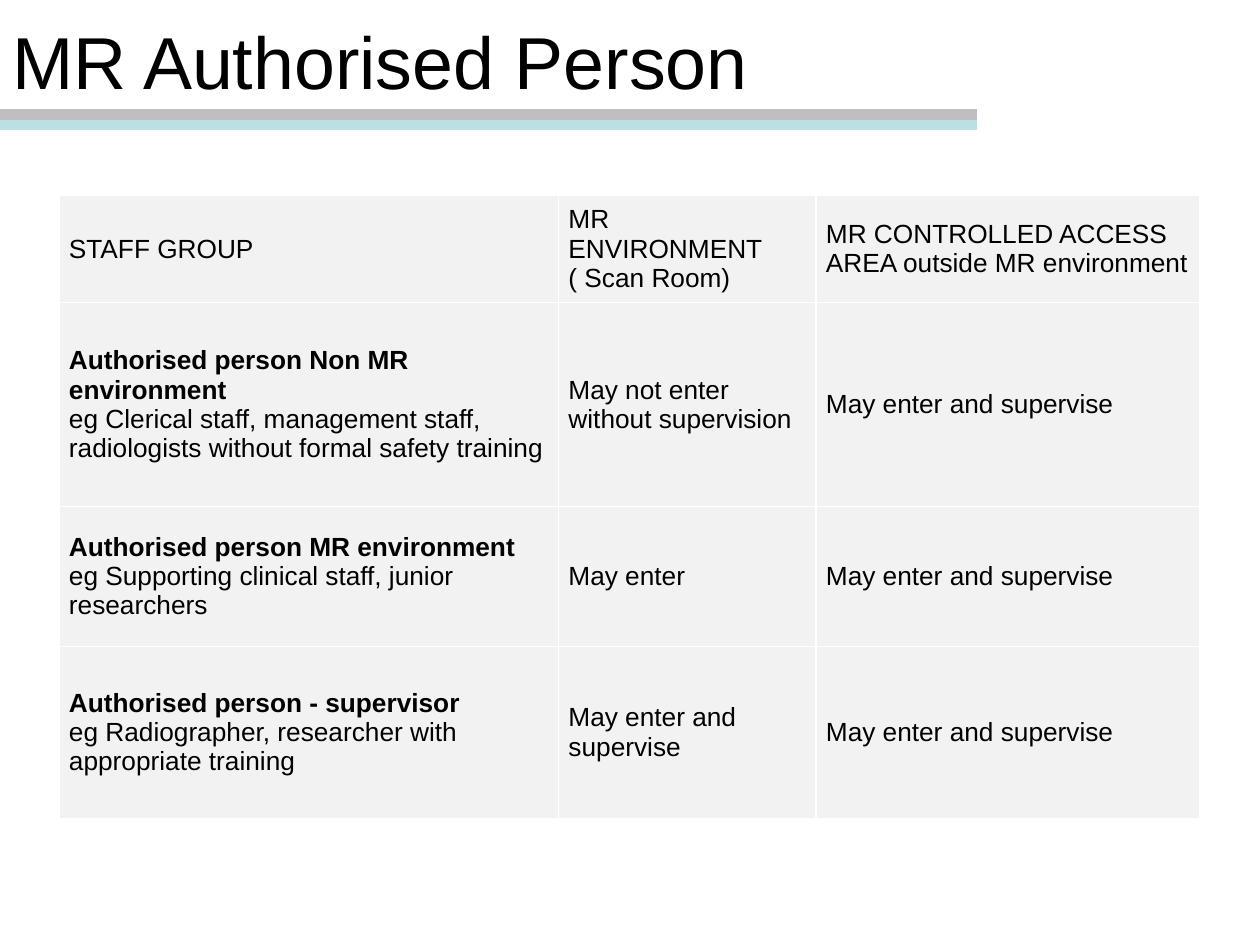
from dataclasses import dataclass

from lxml.etree import SubElement
from pptx import Presentation
from pptx.dml.color import RGBColor
from pptx.enum.shapes import MSO_CONNECTOR as Connector
from pptx.enum.text import MSO_ANCHOR as Anchor
from pptx.oxml.ns import qn
from pptx.util import Cm, Pt

COLOURS = {
    "text": "000000",
    "cell": "F2F2F2",
    "border": "FFFFFF",
    "grey rule": "BFBFBF",
    "blue rule": "BBE0E3",
}
TITLE_FONT = {"name": "Arial", "size": Pt(42), "bold": False}
BODY_FONT = {"name": "Arial", "size": Pt(15), "bold": False}
STAFF_FONT = BODY_FONT | {"bold": True}
CELL_FORMAT = {
    "vertical_anchor": Anchor.MIDDLE,
    "margin_left": Cm(0.2),
    "margin_right": Cm(0.2),
    "margin_top": Cm(0.1),
    "margin_bottom": Cm(0.1),
}
COLUMN_WIDTHS = (10.07, 5.19, 7.74)


@dataclass
class Rule:
    y: float
    colour: str


@dataclass
class AccessRow:
    """One table row; a heading staff group is bold and followed by examples."""
    height: float
    staff: str
    examples: str
    environment: list[str]
    controlled_area: str


RULES = [Rule(2.51, "blue rule"), Rule(2.31, "grey rule")]
SUPERVISE = "May enter and supervise"
ROWS = [
    AccessRow(2.16, "STAFF GROUP", "", ["MR ENVIRONMENT", "( Scan Room)"],
              "MR CONTROLLED ACCESS AREA outside MR environment"),
    AccessRow(4.11, "Authorised person Non MR environment",
              "eg Clerical staff, management staff, radiologists without formal safety training",
              ["May not enter without supervision"], SUPERVISE),
    AccessRow(2.82, "Authorised person MR environment",
              "eg Supporting clinical staff, junior researchers",
              ["May enter"], SUPERVISE),
    AccessRow(3.47, "Authorised person - supervisor",
              "eg Radiographer, researcher with appropriate training",
              [SUPERVISE], SUPERVISE),
]


def colour(name: str) -> RGBColor:
    return RGBColor.from_string(COLOURS[name])


def apply(target, values: dict) -> None:
    """Set each named attribute on the target."""
    for name, value in values.items():
        setattr(target, name, value)


def write(frame, lines: list[tuple[str, dict]]) -> None:
    """Fill a text frame with one paragraph for each (text, font) pair."""
    for index, (text, font) in enumerate(lines):
        paragraph = frame.add_paragraph() if index else frame.paragraphs[0]
        run = paragraph.add_run()
        run.text = text
        apply(run.font, font)
        run.font.color.rgb = colour("text")


def add_rule(slide, rule: Rule) -> None:
    line = slide.shapes.add_connector(
        Connector.STRAIGHT, Cm(0), Cm(rule.y), Cm(19.7), Cm(rule.y))
    line.line.width = Pt(6)
    line.line.color.rgb = colour(rule.colour)
    SubElement(line._element.spPr, qn("a:effectLst"))


def add_title(slide, text: str) -> None:
    box = slide.shapes.add_textbox(Cm(0), Cm(0), Cm(21.59), Cm(2.44))
    frame = box.text_frame
    apply(frame, {"word_wrap": True, "vertical_anchor": Anchor.MIDDLE})
    write(frame, [(text, TITLE_FONT)])


def format_cell(cell) -> None:
    apply(cell, CELL_FORMAT)
    properties = cell._tc.get_or_add_tcPr()
    for side in ("lnL", "lnR", "lnT", "lnB"):
        border = SubElement(properties, qn(f"a:{side}"), w=str(Pt(0.75)))
        fill = SubElement(border, qn("a:solidFill"))
        SubElement(fill, qn("a:srgbClr"), val=COLOURS["border"])
    cell.fill.solid()
    cell.fill.fore_color.rgb = colour("cell")


def staff_lines(row: AccessRow) -> list[tuple[str, dict]]:
    if not row.examples:
        return [(row.staff, BODY_FONT)]
    return [(row.staff, STAFF_FONT), (row.examples, BODY_FONT)]


def add_access_table(slide, rows: list[AccessRow]) -> None:
    table = slide.shapes.add_table(
        len(rows), len(COLUMN_WIDTHS), Cm(1.19), Cm(3.94),
        Cm(sum(COLUMN_WIDTHS)), Cm(sum(row.height for row in rows))).table
    for column, width in zip(table.columns, COLUMN_WIDTHS):
        column.width = Cm(width)
    for table_row, row in zip(table.rows, rows):
        table_row.height = Cm(row.height)
        contents = (
            staff_lines(row),
            [(text, BODY_FONT) for text in row.environment],
            [(row.controlled_area, BODY_FONT)],
        )
        for cell, lines in zip(table_row.cells, contents):
            format_cell(cell)
            write(cell.text_frame, lines)


def main() -> None:
    presentation = Presentation()
    apply(presentation, {"slide_width": Cm(25.4), "slide_height": Cm(19.05)})
    slide = presentation.slides.add_slide(presentation.slide_layouts[6])
    for rule in RULES:
        add_rule(slide, rule)
    add_title(slide, "MR Authorised Person")
    add_access_table(slide, ROWS)
    presentation.save("out.pptx")


if __name__ == "__main__":
    main()
